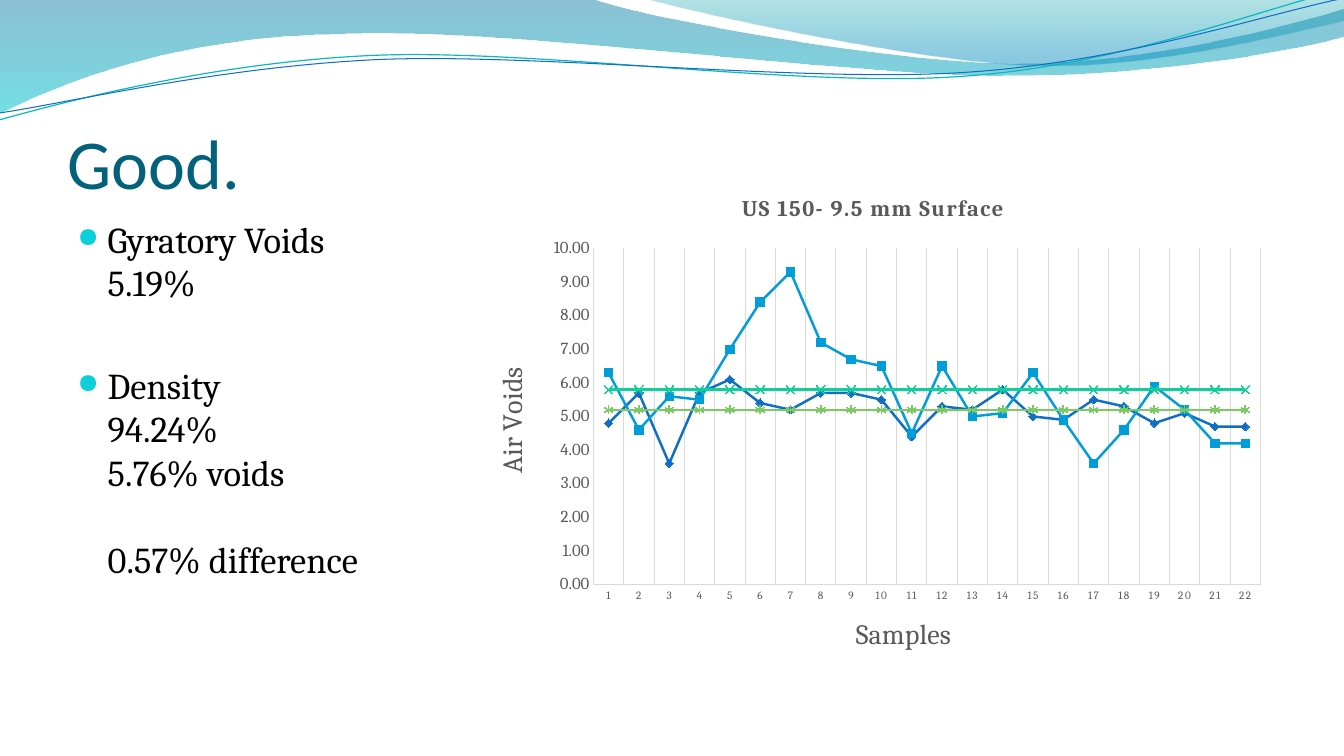
from lxml import etree
from pptx import Presentation
from pptx.chart.data import CategoryChartData
from pptx.dml.color import RGBColor
from pptx.enum.chart import XL_CHART_TYPE as ChartType, XL_MARKER_STYLE as Marker
from pptx.enum.chart import XL_TICK_MARK as Tick
from pptx.enum.text import MSO_ANCHOR as Anchor, MSO_AUTO_SIZE as AutoSize, PP_ALIGN as Align
from pptx.oxml import parse_xml
from pptx.oxml.ns import nsdecls, qn
from pptx.util import Inches, Pt

COLORS = {"title": "04617B", "text": "000000", "bullet": "0BD0D9", "label": "595959",
          "grid": "D9D9D9", "teal": "0AB8BF", "blue": "0F6FC6", "sky": "009DD9",
          "mint": "10CF9B", "green": "7CCA62"}
TITLE = "Good."
BODY = [("Gyratory Voids\v5.19%", 0),
        ("Density\v94.24%\v5.76% voids\v\v0.57% difference", 42)]
CHART_TITLE = ("US 150- 9.5 mm Surface", 16, True, 120, 0.331, 0.03)
CATEGORY_TITLE = ("Samples", 20, False, 0, 0.471, 0.867)
VALUE_TITLE = ("Air Voids", 20, False, 0, 0.022, 0.372)
PLOT_AREA = (0.152, 0.147, 0.827, 0.667)
SAMPLES = 22
SERIES = [
    ("Series 1", "blue", Marker.DIAMOND, True,
     [4.8, 5.7, 3.6, 5.7, 6.1, 5.4, 5.2, 5.7, 5.7, 5.5, 4.4,
      5.3, 5.2, 5.8, 5, 4.9, 5.5, 5.3, 4.8, 5.1, 4.7, 4.7]),
    ("Series 2", "sky", Marker.SQUARE, True,
     [6.3, 4.6, 5.6, 5.5, 7, 8.4, 9.3, 7.2, 6.7, 6.5, 4.5,
      6.5, 5, 5.1, 6.3, 4.9, 3.6, 4.6, 5.9, 5.2, 4.2, 4.2]),
    ("Series 3", "mint", Marker.X, False, [5.8] * SAMPLES),
    ("Series 4", "green", Marker.STAR, False, [5.2] * SAMPLES),
]
BANDS = [
    ([(0, 0), (5.87, -0.01),
      (6.34, 0.17, 8.85, 0.63, 10.11, 0.63), (11.38, 0.63, 12.78, 0.26, 13.33, 0.09),
      (13.35, 0.36), (13.11, 0.44, 11.6, 0.76, 9.94, 0.75),
      (8.29, 0.75, 5.09, 0.28, 3.43, 0.34), (1.72, 0.36, 0.61, 0.83, -0.01, 1.13)],
     [(0, "0074A1", 45), (100, "00C6CF", 55)]),
    ([(6.39, -0.01), (6.79, 0.11, 9.09, 0.62, 10.25, 0.65),
      (11.41, 0.69, 12.82, 0.32, 13.33, 0.21), (13.33, 0)],
     [(0, "00A1A9", 30), (80, "008BBF", 45)]),
]
WAVES = [
    ([(-0.01, 1.19), (0.64, 1.01, 2.11, 0.62, 3.69, 0.55),
      (5.27, 0.48, 7.9, 0.87, 9.5, 0.76), (11.1, 0.66, 12.52, 0.08, 13.31, -0.1)], "teal", 0.85),
    ([(0, 1.12), (0.63, 1.03, 2.18, 0.66, 3.78, 0.59),
      (5.37, 0.53, 7.96, 0.82, 9.55, 0.72), (11.15, 0.62, 12.55, 0.14, 13.34, -0.02)], "blue", 0.75),
]


def rgb(name):
    return RGBColor.from_string(COLORS[name])


def set_font(font, face, size, color, bold=False):
    font.name, font.size, font.bold = face, Pt(size), bold
    font.color.rgb = rgb(color)


def add_outline(page, segments, close):
    points = [(Inches(x), Inches(y)) for segment in segments
              for x, y in zip(segment[::2], segment[1::2])]
    builder = page.shapes.build_freeform(*points[0], scale=1.0)
    builder.add_line_segments(points[1:], close=close)
    shape = builder.convert_to_shape()
    shape.shadow.inherit = False
    lines = iter(list(shape._element.iter(qn("a:lnTo"))))
    for segment in segments[1:]:
        first = next(lines)
        if len(segment) == 6:
            first.tag = qn("a:cubicBezTo")
            for _ in range(2):
                extra = next(lines)
                first.append(extra[0])
                extra.getparent().remove(extra)
    return shape


def add_band(page, segments, stops):
    shape = add_outline(page, segments, True)
    shape.line.fill.background()
    stop_xml = "".join(
        f'<a:gs pos="{place * 1000}"><a:srgbClr val="{color}">'
        f'<a:alpha val="{opacity * 1000}"/></a:srgbClr></a:gs>' for place, color, opacity in stops)
    gradient = parse_xml(f'<a:gradFill {nsdecls("a")} rotWithShape="1"><a:gsLst>{stop_xml}</a:gsLst>'
                         '<a:lin ang="5400000" scaled="0"/></a:gradFill>')
    shape._element.spPr.find(qn("a:custGeom")).addnext(gradient)


def add_wave(page, segments, color, width):
    shape = add_outline(page, segments, False)
    shape.fill.background()
    shape.line.color.rgb = rgb(color)
    shape.line.width = Pt(width)


def add_body(page):
    box = page.shapes.add_textbox(Inches(0.67), Inches(2.1), Inches(5.89), Inches(4.85))
    frame = box.text_frame
    frame.word_wrap = True
    for index, (words, gap) in enumerate(BODY):
        para = frame.paragraphs[0] if index == 0 else frame.add_paragraph()
        para.text = words
        para.space_before = Pt(gap)
        props = para._p.get_or_add_pPr()
        props.set("marL", str(Inches(0.3)))
        props.set("indent", str(-Inches(0.3)))
        color = etree.SubElement(props, qn("a:buClr"))
        etree.SubElement(color, qn("a:srgbClr"), val=COLORS["bullet"])
        etree.SubElement(props, qn("a:buSzPct"), val="75000")
        etree.SubElement(props, qn("a:buChar"), char="●")
        set_font(para.font, "Cambria", 26, "text")


def make_layout(x, y, size=None):
    parts = [("xMode", "edge"), ("yMode", "edge"), ("x", x), ("y", y)]
    if size:
        parts = [("layoutTarget", "inner")] + parts + [("w", size[0]), ("h", size[1])]
    inner = "".join(f'<c:{tag} val="{value}"/>' for tag, value in parts)
    return parse_xml(f'<c:layout {nsdecls("c")}><c:manualLayout>{inner}</c:manualLayout></c:layout>')


def drop_layout(element):
    for layout in element.findall(qn("c:layout")):
        element.remove(layout)


def set_chart_title(title, words, size, bold, spacing, x, y):
    para = title.text_frame.paragraphs[0]
    para.text = words
    set_font(para.font, "Cambria", size, "label", bold)
    para.font._rPr.set("spc", str(spacing))
    element = title._element
    drop_layout(element)
    element.find(qn("c:tx")).addnext(make_layout(x, y))


def style_axis(axis, size):
    axis.major_tick_mark = axis.minor_tick_mark = Tick.NONE
    set_font(axis.tick_labels.font, "Cambria", size, "label")
    axis.format.line.color.rgb = rgb("grid")
    axis.format.line.width = Pt(0.75)


def add_voids_chart(page):
    data = CategoryChartData(number_format="0.00")
    data.categories = [str(sample) for sample in range(1, SAMPLES + 1)]
    for name, _, _, _, values in SERIES:
        data.add_series(name, values)
    chart = page.shapes.add_chart(ChartType.LINE_MARKERS, Inches(4.67), Inches(1.73),
                                  Inches(8), Inches(5), data).chart
    set_font(chart.font, "Cambria", 10, "text")
    chart.has_legend = False
    set_chart_title(chart.chart_title, *CHART_TITLE)
    samples, voids = chart.category_axis, chart.value_axis
    style_axis(samples, 8)
    style_axis(voids, 12)
    samples.tick_labels.font._rPr.set("spc", "100")
    samples.has_major_gridlines, voids.has_major_gridlines = True, False
    samples.major_gridlines.format.line.color.rgb = rgb("grid")
    samples.major_gridlines.format.line.width = Pt(0.75)
    voids.minimum_scale, voids.maximum_scale, voids.major_unit = 0, 10, 1
    voids.tick_labels.number_format = "0.00"
    voids.tick_labels.number_format_is_linked = False
    set_chart_title(samples.axis_title, *CATEGORY_TITLE)
    set_chart_title(voids.axis_title, *VALUE_TITLE)
    plot = chart.plots[0]
    plot.vary_by_categories = False
    for series, (_, color, style, filled, _) in zip(plot.series, SERIES):
        series.smooth = False
        series.format.line.color.rgb = rgb(color)
        series.format.line.width = Pt(1.75)
        marker = series.marker
        marker.style, marker.size = style, 6
        marker.format.line.color.rgb = rgb(color)
        if filled:
            marker.format.fill.solid()
            marker.format.fill.fore_color.rgb = rgb(color)
        else:
            marker.format.fill.background()
    area = chart._chartSpace.chart.plotArea
    drop_layout(area)
    area.insert(0, make_layout(*PLOT_AREA[:2], PLOT_AREA[2:]))


def main():
    deck = Presentation()
    deck.slide_width, deck.slide_height = Inches(13.33), Inches(7.5)
    page = deck.slides.add_slide(deck.slide_layouts[5])
    for segments, stops in BANDS:
        add_band(page, segments, stops)
    for segments, color, width in WAVES:
        add_wave(page, segments, color, width)
    title = page.shapes.title
    title.left, title.top, title.width, title.height = map(Inches, (0.67, 0.77, 12, 1.25))
    frame = title.text_frame
    frame.text = TITLE
    frame.auto_size, frame.vertical_anchor = AutoSize.NONE, Anchor.BOTTOM
    frame.margin_left = frame.margin_right = frame.margin_bottom = 0
    frame.paragraphs[0].alignment = Align.LEFT
    set_font(frame.paragraphs[0].font, "Calibri", 50, "title")
    add_body(page)
    add_voids_chart(page)
    deck.save("out.pptx")


if __name__ == "__main__":
    main()
